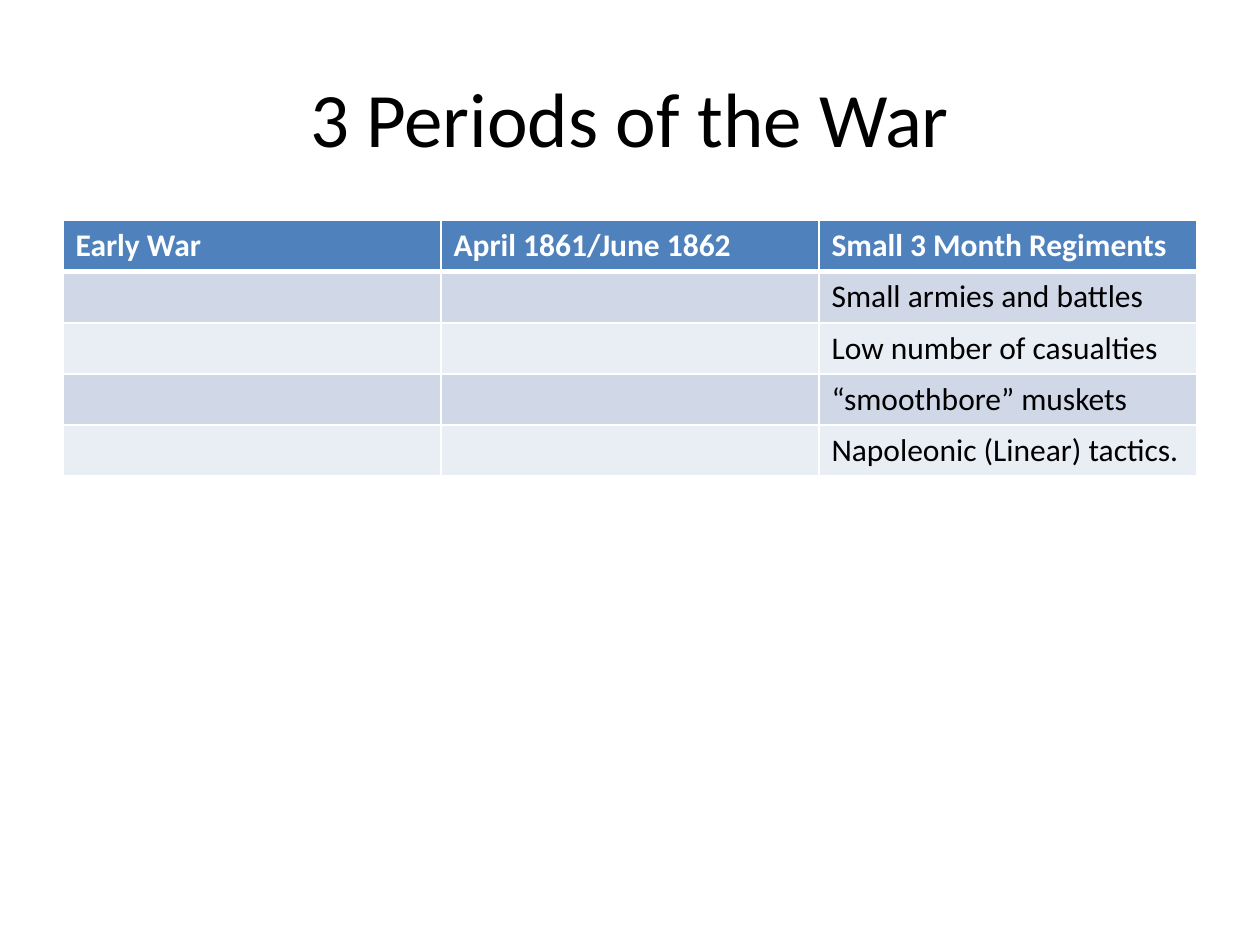
import pptx
import pptx.util
import pptx.dml.color
import pptx.enum.text
import pptx.oxml
import pptx.oxml.ns

COLOURS = {
    "background": "FFFFFF",
    "text": "000000",
    "header": "4F81BD",
    "header_text": "FFFFFF",
    "band_dark": "D0D8E8",
    "band_light": "E9EDF4",
    "border": "FFFFFF",
}

PERIOD_ROWS = [
    ["Early War", "April 1861/June 1862", "Small 3 Month Regiments"],
    ["", "", "Small armies and battles"],
    ["", "", "Low number of casualties"],
    ["", "", "“smoothbore” muskets"],
    ["", "", "Napoleonic (Linear) tactics."],
]


class SlideBuilder:
    """Style and current slide; lengths are cells of a 20 by 150 grid."""

    font = "Calibri"
    columns, rows = 20, 150

    def __init__(self, presentation):
        self.column = presentation.slide_width // self.columns
        self.row = presentation.slide_height // self.rows
        self.slide = presentation.slides.add_slide(presentation.slide_layouts[6])
        fill = self.slide.background.fill
        fill.solid()
        fill.fore_color.rgb = self.colour("background")

    def colour(self, name):
        return pptx.dml.color.RGBColor.from_string(COLOURS[name])

    def box(self, left, top, width, height):
        return (left * self.column, top * self.row,
                width * self.column, height * self.row)

    def run(self, paragraph, text, size, colour, bold=False):
        run = paragraph.add_run()
        run.text = text
        run.font.name = self.font
        run.font.size = pptx.util.Pt(size)
        run.font.bold = bold
        run.font.color.rgb = self.colour(colour)

    def title(self, text, *place):
        frame = self.slide.shapes.add_textbox(*self.box(*place)).text_frame
        frame.word_wrap = True
        frame.vertical_anchor = pptx.enum.text.MSO_ANCHOR.MIDDLE
        paragraph = frame.paragraphs[0]
        paragraph.alignment = pptx.enum.text.PP_ALIGN.CENTER
        self.run(paragraph, text, 44, "text")

    def borders(self, cell, bottom):
        """Draw 1 pt cell borders, with a bottom border of its own width."""
        properties = cell._tc.get_or_add_tcPr()
        widths = {"lnL": 1, "lnR": 1, "lnT": 1, "lnB": bottom}
        for index, (tag, width) in enumerate(widths.items()):
            properties.insert(index, pptx.oxml.parse_xml(
                f'<a:{tag} {pptx.oxml.ns.nsdecls("a")} w="{pptx.util.Pt(width)}">'
                f'<a:solidFill><a:srgbClr val="{COLOURS["border"]}"/></a:solidFill>'
                f'</a:{tag}>'))

    def table(self, content, *place):
        table = self.slide.shapes.add_table(
            len(content), len(content[0]), *self.box(*place)).table
        for row_index, texts in enumerate(content):
            header = row_index == 0
            band = "band_dark" if row_index % 2 else "band_light"
            for column_index, text in enumerate(texts):
                cell = table.cell(row_index, column_index)
                cell.fill.solid()
                cell.fill.fore_color.rgb = self.colour("header" if header else band)
                # The line under the header is shared with the first body row.
                self.borders(cell, 3 if header else 1)
                if row_index == 1:
                    top = cell._tc.tcPr.find(pptx.oxml.ns.qn("a:lnT"))
                    top.set("w", str(pptx.util.Pt(3)))
                if text:
                    self.run(cell.text_frame.paragraphs[0], text, 18,
                             "header_text" if header else "text", header)


def main():
    presentation = pptx.Presentation()
    presentation.slide_width = pptx.util.Inches(10)
    presentation.slide_height = pptx.util.Inches(7.5)
    builder = SlideBuilder(presentation)
    builder.title("3 Periods of the War", 1, 6, 18, 25)
    builder.table(PERIOD_ROWS, 1, 35, 18, 40.6)
    presentation.save("out.pptx")


if __name__ == "__main__":
    main()
